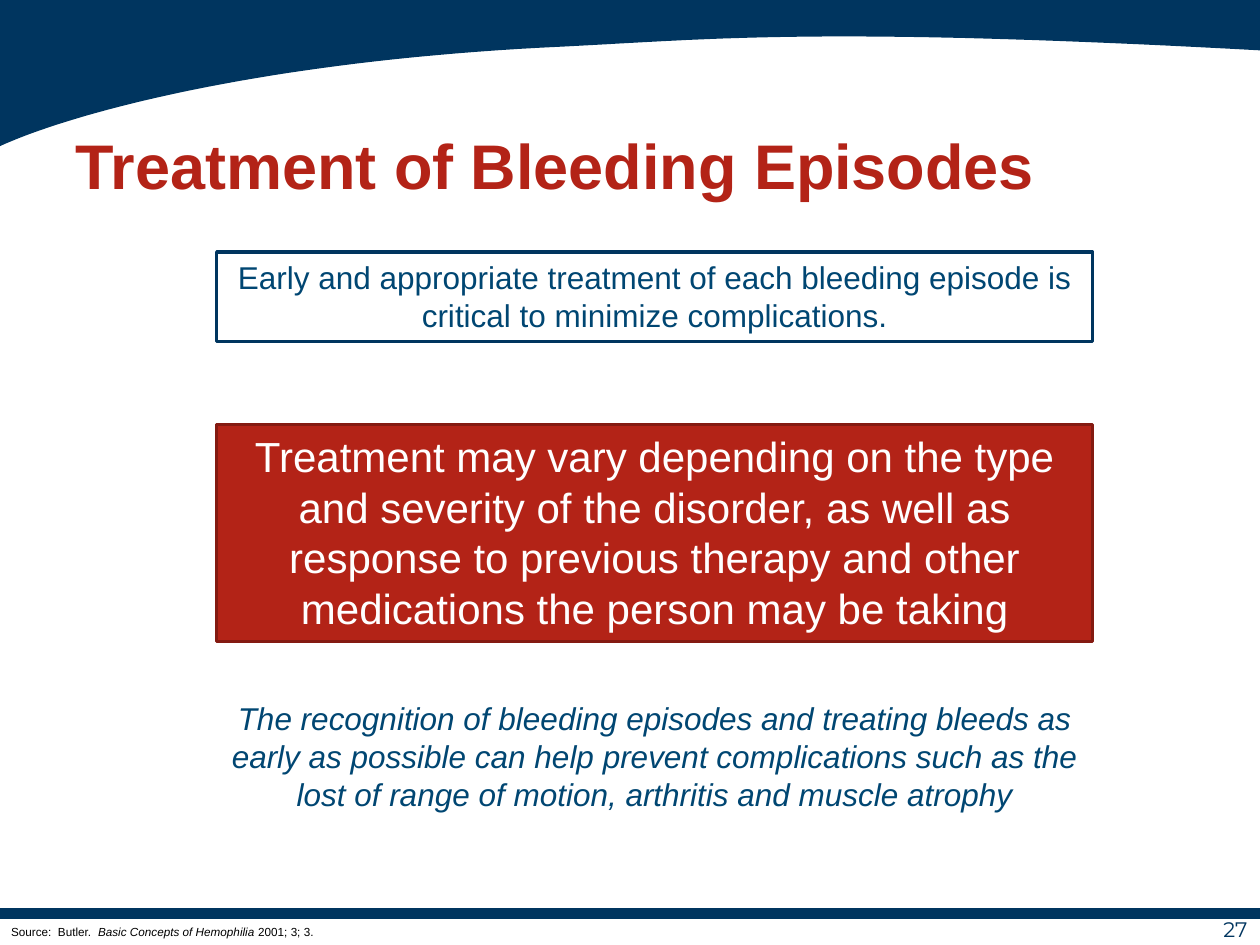
from lxml import etree
from pptx import Presentation
from pptx.dml.color import RGBColor
from pptx.enum.shapes import MSO_CONNECTOR, MSO_SHAPE
from pptx.enum.text import MSO_ANCHOR, MSO_AUTO_SIZE, PP_ALIGN
from pptx.oxml.ns import qn
from pptx.util import Inches, Pt

LEFT, CENTER, RIGHT = PP_ALIGN.LEFT, PP_ALIGN.CENTER, PP_ALIGN.RIGHT
TOP, MIDDLE = MSO_ANCHOR.TOP, MSO_ANCHOR.MIDDLE
GROW, FIXED = MSO_AUTO_SIZE.SHAPE_TO_FIT_TEXT, MSO_AUTO_SIZE.NONE

COLORS = {
    "navy": "00355F",
    "blue": "004672",
    "red": "B32317",
    "dark red": "841A11",
    "white": "FFFFFF",
    "black": "000000",
}


def rgb(name):
    return RGBColor.from_string(COLORS[name])


def write(shape, *runs, size, color, font="Arial", bold=False, italic=(),
          align=LEFT, anchor=TOP, fit=GROW):
    """Fill a shape with one paragraph; italic lists the slanted run indexes."""
    frame = shape.text_frame
    frame.word_wrap = True
    frame.auto_size = fit
    frame.vertical_anchor = anchor
    paragraph = frame.paragraphs[0]
    paragraph.alignment = align
    for index, words in enumerate(runs):
        run = paragraph.add_run()
        run.text = words
        run.font.name = font
        run.font.size = Pt(size)
        run.font.bold = bold
        run.font.italic = index in italic
        run.font.color.rgb = rgb(color)


prs = Presentation()
prs.slide_width, prs.slide_height = Inches(10), Inches(7.5)
slide = prs.slides.add_slide(prs.slide_layouts[5])
shapes = slide.shapes

# Footer rule
rule = shapes.add_connector(
    MSO_CONNECTOR.STRAIGHT, 0, Inches(7.25), Inches(10), Inches(7.25))
rule.line.color.rgb = rgb("navy")
rule.line.width = Pt(6.75)
etree.SubElement(rule.element.spPr, qn("a:effectLst"))

# Curved header band: the lower edge is two Bezier curves, sampled in steps
STEPS = 40
edge_curves = [
    [(10, 0.4), (6.51, 0.21), (5.67, 0.31), (4.47, 0.37)],
    [(4.47, 0.37), (2.08, 0.48), (0.57, 0.9), (0, 1.16)],
]
band_points = [(10, -0.01), (10, 0.4)]
for curve in edge_curves:
    for step in range(1, STEPS + 1):
        t = step / STEPS
        weights = ((1 - t) ** 3, 3 * t * (1 - t) ** 2, 3 * t ** 2 * (1 - t), t ** 3)
        band_points.append(tuple(
            sum(w * point[axis] for w, point in zip(weights, curve))
            for axis in (0, 1)))
outline = shapes.build_freeform(0, Inches(-0.01), scale=1.0)
outline.add_line_segments([(Inches(x), Inches(y)) for x, y in band_points])
band = outline.convert_to_shape()
band.shadow.inherit = False
band.fill.solid()
band.fill.fore_color.rgb = rgb("navy")
band.line.fill.background()

# Title
title = shapes.title
title.left, title.top = Inches(0.5), Inches(0.8)
title.width, title.height = Inches(9), Inches(1)
write(title, "Treatment of Bleeding Episodes", size=36, color="red", bold=True,
      anchor=MIDDLE, fit=FIXED)

# Slide number
number = shapes.add_textbox(Inches(8.83), Inches(7.25), Inches(1.17), Inches(0.25))
write(number, "27", size=12, color="navy", font="Montserrat", align=RIGHT,
      anchor=MIDDLE, fit=FIXED)

# Framed statements
BODY_LEFT, BODY_WIDTH = Inches(1.72), Inches(6.95)
statements = [
    (2, 0.71, "white", "navy", "blue", 18,
     "Early and appropriate treatment of each bleeding episode is critical "
     "to minimize complications."),
    (3.37, 1.72, "red", "dark red", "white", 24,
     "Treatment may vary depending on the type and severity of the disorder, "
     "as well as response to previous therapy and other medications the "
     "person may be taking"),
]
for top, height, fill, border, color, size, words in statements:
    statement = shapes.add_shape(
        MSO_SHAPE.RECTANGLE, BODY_LEFT, Inches(top), BODY_WIDTH, Inches(height))
    statement.shadow.inherit = False
    statement.fill.solid()
    statement.fill.fore_color.rgb = rgb(fill)
    statement.line.color.rgb = rgb(border)
    statement.line.width = Pt(2)
    write(statement, words, size=size, color=color, align=CENTER)

# Closing remark
remark = shapes.add_textbox(BODY_LEFT, Inches(5.5), BODY_WIDTH, Inches(1.01))
write(remark,
      "The recognition of bleeding episodes and treating bleeds as early as "
      "possible can help prevent complications such as the lost of range of "
      "motion, arthritis and muscle atrophy",
      size=18, color="blue", italic=(0,), align=CENTER)

# Source, with room to stay on one line
source = shapes.add_textbox(Inches(-0.01), Inches(7.29), Inches(2.9), Inches(0.21))
write(source, "Source:  Butler.  ", "Basic Concepts of Hemophilia ", "2001; 3; 3.",
      size=6.7, color="black", italic=(1,))

prs.save("out.pptx")
